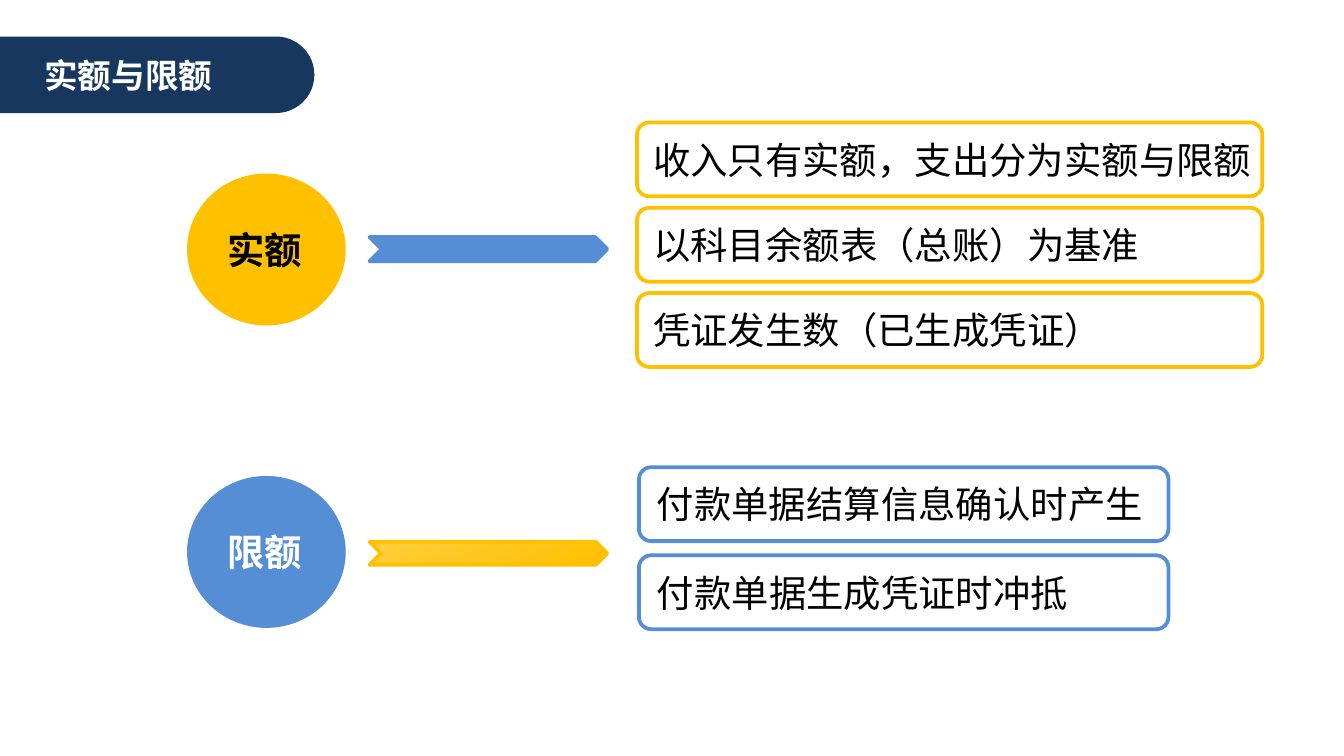
from copy import deepcopy
from dataclasses import dataclass

from lxml import etree
from pptx import Presentation
from pptx import util as u
from pptx.dml.color import RGBColor
from pptx.enum import shapes, text
from pptx.oxml import ns

Pt = u.Pt
Preset = shapes.MSO_SHAPE


@dataclass(frozen=True)
class Theme:
    font: str = "Noto Sans CJK SC"
    navy: str = "17375E"
    gold: str = "FFC000"
    blue: str = "558ED5"
    black: str = "000000"
    white: str = "FFFFFF"
    # Gradient stops of the gold arrow: position, colour
    gold_gradient: tuple = ((0, "FECF40"), (0.97, "FFC000"), (1, "846C21"))
    title_size: int = 18
    body_size: int = 20
    line_width: int = 2


THEME = Theme()


def rgb(color):
    return RGBColor.from_string(color)


def add_preset(slide, preset, box, fill=None, line=None):
    shape = slide.shapes.add_shape(preset, *map(Pt, box))
    shape.shadow.inherit = False
    if fill:
        shape.fill.solid()
        shape.fill.fore_color.rgb = rgb(fill)
    else:
        shape.fill.background()
    if line:
        shape.line.color.rgb = rgb(line)
        shape.line.width = Pt(THEME.line_width)
    else:
        shape.line.fill.background()
    return shape


def add_label(slide, box, words, size, color, bold=False):
    text_box = slide.shapes.add_textbox(*map(Pt, box))
    frame = text_box.text_frame
    frame.text = words
    frame.word_wrap = True
    frame.auto_size = text.MSO_AUTO_SIZE.SHAPE_TO_FIT_TEXT
    run = frame.paragraphs[0].runs[0]
    run.font.name = THEME.font
    run.font.size = Pt(size)
    run.font.bold = bold
    run.font.color.rgb = rgb(color)
    # East Asian typeface for the Chinese characters
    east_asian = etree.SubElement(run.font._element, ns.qn("a:ea"))
    east_asian.set("typeface", THEME.font)


def apply_gradient(shape, stops, angle):
    shape.fill.gradient()
    shape.fill.gradient_angle = angle
    stop_list = shape.element.spPr.find(".//" + ns.qn("a:gsLst"))
    stop_list.append(deepcopy(stop_list[-1]))
    for stop, (position, color) in zip(shape.fill.gradient_stops, stops):
        stop.position = position
        stop.color.rgb = rgb(color)


def add_title_tab(slide, left, top, width, height):
    tab = add_preset(slide, Preset.ROUNDED_RECTANGLE,
                     (left, top, width, height), fill=THEME.navy)
    tab.adjustments[0] = 0.5
    add_label(slide, (left + 38.2, top + 6.5, 144.7, 29), "实额与限额",
              THEME.title_size, THEME.white, bold=True)


def add_circle(slide, left, top, name, fill, color):
    add_preset(slide, Preset.OVAL, (left, top, 85, 81.4), fill=fill)
    add_label(slide, (left + 14.4, top + 25.2, 70.6, 31.7), name,
              THEME.body_size, color, bold=True)


def add_arrow(slide, left, top, height, color, gradient=None):
    arrow = add_preset(slide, Preset.CHEVRON, (left, top, 127.4, height),
                       fill=color, line=color)
    if gradient:
        apply_gradient(arrow, gradient, angle=290)


def add_notes_column(slide, left, top, width, pitch, indent, notes, color):
    """Stack outlined boxes, one note in each; notes are (words, text width)."""
    for index, (words, text_width) in enumerate(notes):
        row_top = top + index * pitch
        add_label(slide, (left + indent, row_top + 4.2, text_width, 31.7),
                  words, THEME.body_size, THEME.black)
        add_preset(slide, Preset.ROUNDED_RECTANGLE,
                   (left, row_top, width, 39.6), line=color)


def main():
    presentation = Presentation()
    presentation.slide_width, presentation.slide_height = Pt(720), Pt(405)
    slide = presentation.slides.add_slide(presentation.slide_layouts[6])

    # Title
    add_title_tab(slide, -21.6, 19.6, 190, 41)

    # Actual amount
    add_circle(slide, 100.2, 93, "实额", THEME.gold, THEME.black)
    add_arrow(slide, 198, 127, 13, THEME.blue)
    add_notes_column(slide, 341.3, 65.6, 335, 45.7, 1.5, [
        ("收入只有实额，支出分为实额与限额", 368),
        ("以科目余额表（总账）为基准", 281.5),
        ("凭证发生数（已生成凭证）", 265.7),
    ], THEME.gold)

    # Limit amount
    add_circle(slide, 100.2, 255, "限额", THEME.blue, THEME.white)
    add_arrow(slide, 198, 290.3, 12.3, THEME.gold, THEME.gold_gradient)
    add_notes_column(slide, 342.3, 250.3, 283.7, 47.2, 2.5, [
        ("付款单据结算信息确认时产生", 319),
        ("付款单据生成凭证时冲抵", 241.2),
    ], THEME.blue)

    presentation.save("out.pptx")


if __name__ == "__main__":
    main()
